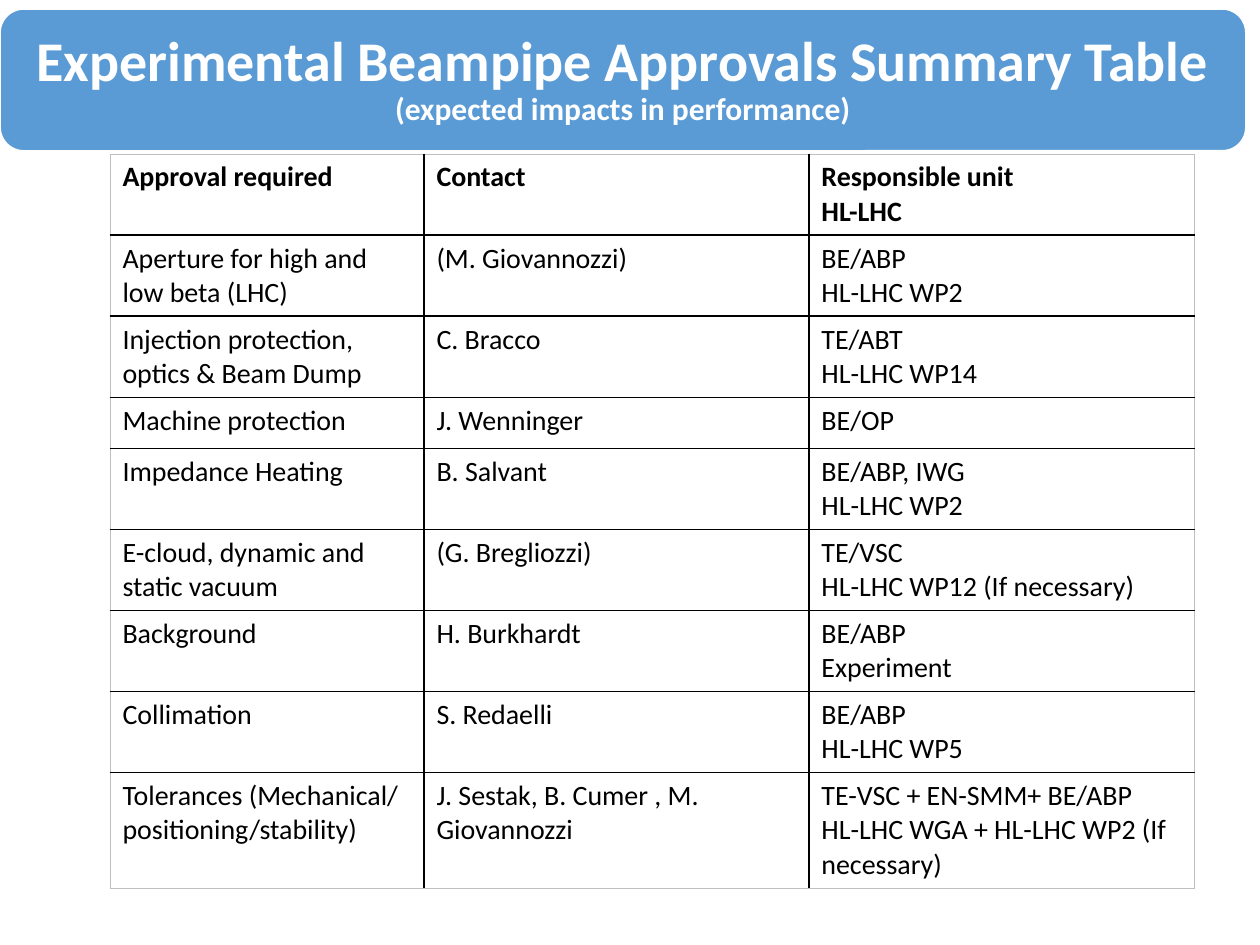
from dataclasses import dataclass

import pptx
import pptx.dml.color
import pptx.enum.shapes
import pptx.enum.text
import pptx.oxml.ns
import pptx.util
from lxml import etree

PX = 914400 // 126
SLIDE = (1260, 945)

TITLE = "Experimental Beampipe Approvals Summary Table "
SUBTITLE = "(expected impacts in performance)"
BANNER = (0, 9, 1246, 142)
BANNER_INSET = 16

# Approval required, contact, lines of the responsible unit
APPROVALS = [
    ("Approval required", "Contact", "Responsible unit\nHL-LHC"),
    ("Aperture for high and low beta (LHC)", "(M. Giovannozzi)", "BE/ABP\nHL-LHC WP2"),
    ("Injection protection, optics & Beam Dump", "C. Bracco", "TE/ABT\nHL-LHC WP14"),
    ("Machine protection", "J. Wenninger", "BE/OP"),
    ("Impedance Heating", "B. Salvant", "BE/ABP, IWG\nHL-LHC WP2"),
    ("E-cloud, dynamic and static vacuum", "(G. Bregliozzi)",
     "TE/VSC\nHL-LHC WP12 (If necessary)"),
    ("Background", "H. Burkhardt", "BE/ABP\nExperiment"),
    ("Collimation", "S. Redaelli", "BE/ABP\nHL-LHC WP5"),
    ("Tolerances (Mechanical/ positioning/stability)",
     "J. Sestak, B. Cumer , M. Giovannozzi",
     "TE-VSC + EN-SMM+ BE/ABP\nHL-LHC WGA + HL-LHC WP2 (If necessary)"),
]
TABLE_AT = (110, 154)
COLUMNS = [314, 385, 386]
ROWS = [81, 81, 81, 51, 81, 81, 81, 81, 116]


@dataclass(frozen=True)
class Theme:
    font: str = "Calibri"
    banner: str = "5B9BD5"
    light: str = "FFFFFF"
    ink: str = "000000"
    edge: str = "BFBFBF"
    title: int = 32
    subtitle: int = 18
    body: int = 16
    rule: float = 1
    edge_rule: float = 0.5


THEME = Theme()


def px(length):
    return pptx.util.Emu(length * PX)


def rgb(value):
    return pptx.dml.color.RGBColor.from_string(value)


def style(font, size, color, bold):
    font.name = THEME.font
    font.size = pptx.util.Pt(size)
    font.color.rgb = rgb(color)
    font.bold = bold


def set_borders(cell, outer_sides):
    """Rule all four sides, with a thin grey line on the table's outer sides."""
    properties = cell._tc.get_or_add_tcPr()
    for index, side in enumerate(("lnL", "lnR", "lnT", "lnB")):
        outer = side in outer_sides
        width = THEME.edge_rule if outer else THEME.rule
        line = etree.Element(pptx.oxml.ns.qn(f"a:{side}"), w=str(pptx.util.Pt(width)))
        fill = etree.SubElement(line, pptx.oxml.ns.qn("a:solidFill"))
        etree.SubElement(fill, pptx.oxml.ns.qn("a:srgbClr"),
                         val=THEME.edge if outer else THEME.ink)
        properties.insert(index, line)


def add_approvals(page):
    table = page.shapes.add_table(
        len(ROWS), len(COLUMNS), *map(px, TABLE_AT), px(sum(COLUMNS)), px(sum(ROWS))).table
    for column, width in zip(table.columns, COLUMNS):
        column.width = px(width)
    for row, height in zip(table.rows, ROWS):
        row.height = px(height)

    for r, texts in enumerate(APPROVALS):
        for c, text in enumerate(texts):
            cell = table.cell(r, c)
            cell.fill.solid()
            cell.fill.fore_color.rgb = rgb(THEME.light)
            cell.text = text
            for para in cell.text_frame.paragraphs:
                style(para.font, THEME.body, THEME.ink, r == 0)
            at_edge = {"lnL": c == 0, "lnR": c == len(COLUMNS) - 1,
                       "lnT": r == 0, "lnB": r == len(ROWS) - 1}
            set_borders(cell, [side for side, outer in at_edge.items() if outer])


def add_banner(page):
    banner = page.shapes.add_shape(
        pptx.enum.shapes.MSO_SHAPE.ROUNDED_RECTANGLE, *map(px, BANNER))
    banner.shadow.inherit = False
    banner.fill.solid()
    banner.fill.fore_color.rgb = rgb(THEME.banner)
    banner.line.color.rgb = rgb(THEME.light)
    banner.line.width = pptx.util.Pt(THEME.rule)

    frame = banner.text_frame
    frame.word_wrap = True
    frame.vertical_anchor = pptx.enum.text.MSO_ANCHOR.MIDDLE
    frame.margin_left = frame.margin_right = px(BANNER_INSET)
    frame.margin_top = frame.margin_bottom = px(BANNER_INSET)
    para = frame.paragraphs[0]
    para.alignment = pptx.enum.text.PP_ALIGN.CENTER
    para.line_spacing = 0.9
    for text, size in ((TITLE, THEME.title), (SUBTITLE, THEME.subtitle)):
        span = para.add_run()
        span.text = text
        style(span.font, size, THEME.light, True)


def main():
    deck = pptx.Presentation()
    deck.slide_width, deck.slide_height = map(px, SLIDE)
    page = deck.slides.add_slide(deck.slide_layouts[6])
    add_approvals(page)
    add_banner(page)
    deck.save("out.pptx")


if __name__ == "__main__":
    main()
